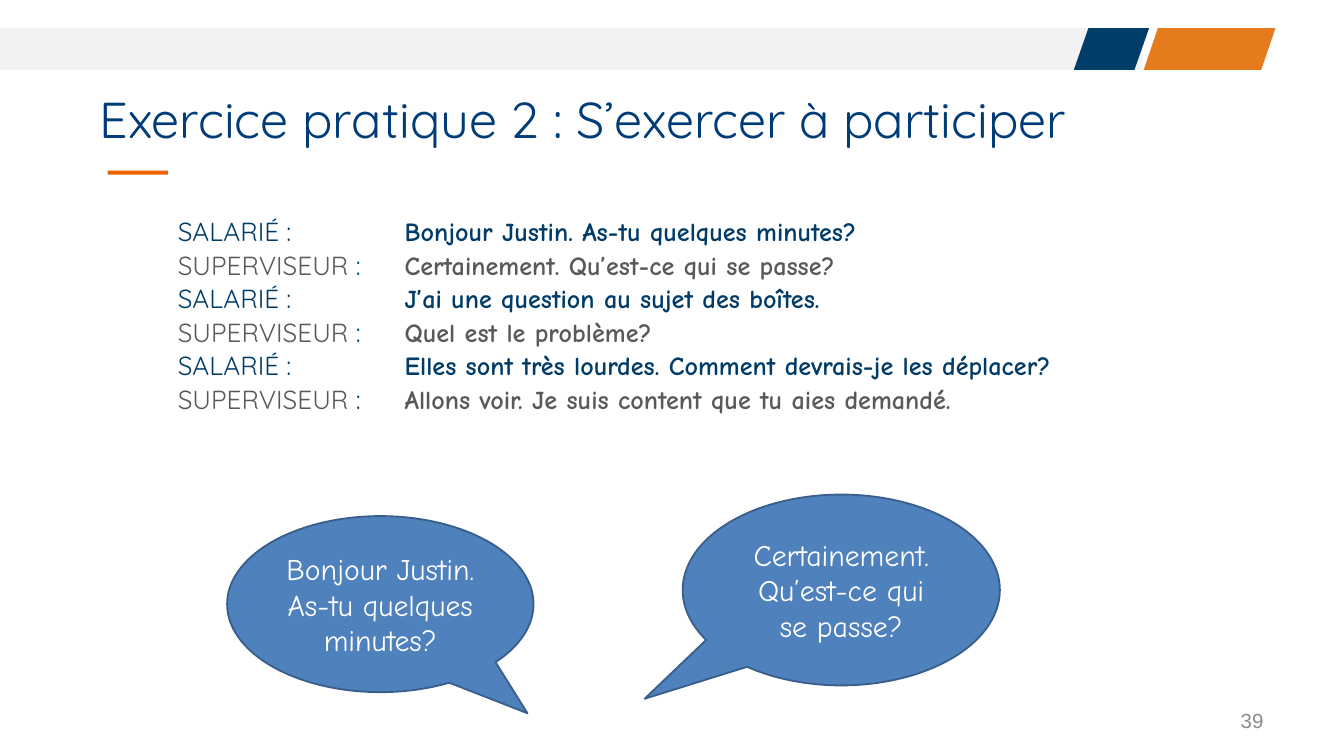
from pptx import Presentation
from pptx.dml.color import RGBColor
from pptx.enum import shapes, text
from pptx.oxml import xmlchemy
from pptx.util import Inches, Pt

NAVY, GREY = "003C67", "595959"
LINES = [
    "Bonjour Justin. As-tu quelques minutes?",
    "Certainement. Qu’est-ce qui se passe?",
    "J’ai une question au sujet des boîtes.",
    "Quel est le problème?",
    "Elles sont très lourdes. Comment devrais-je les déplacer?",
    "Allons voir. Je suis content que tu aies demandé.",
]


def rgb(value):
    """Return the colour for a hex string."""
    return RGBColor.from_string(value)


def place(sp, left, top, width, height):
    """Move and size a shape, in inches."""
    sp.left, sp.top = Inches(left), Inches(top)
    sp.width, sp.height = Inches(width), Inches(height)


def add_run(p, content, font="Quicksand", size=14, color=NAVY, bold=False):
    """Add a formatted run to a paragraph."""
    r = p.add_run()
    r.text = content
    r.font.name, r.font.size, r.font.bold = font, Pt(size), bold
    r.font.color.rgb = rgb(color)


def set_frame(sp, anchor, x=0.1, y=0.05):
    """Set wrapping, anchor and margins, and return the text frame."""
    tf = sp.text_frame
    tf.word_wrap = True
    tf.auto_size = text.MSO_AUTO_SIZE.NONE
    tf.vertical_anchor = anchor
    tf.margin_left = tf.margin_right = Inches(x)
    tf.margin_top = tf.margin_bottom = Inches(y)
    return tf


def add_shape(slide, kind, box, fill, adjust=(), line=None):
    """Add a flat preset shape."""
    sp = slide.shapes.add_shape(kind, *map(Inches, box))
    sp.shadow.inherit = False
    for i, value in enumerate(adjust):
        sp.adjustments[i] = value
    sp.fill.solid()
    sp.fill.fore_color.rgb = rgb(fill)
    if line:
        sp.line.color.rgb = rgb(line)
        sp.line.width = Pt(1)
    else:
        sp.line.fill.background()
    return sp


def add_banner(slide):
    """Add the band across the top and the rule under the title."""
    kinds = shapes.MSO_SHAPE
    add_shape(slide, kinds.ROUNDED_RECTANGLE, (0, 0.21, 8.5, 0.31), "F2F2F2", [0])
    add_shape(slide, kinds.PARALLELOGRAM, (8.51, 0.21, 0.98, 0.31), "E47C1D", [0.34])
    add_shape(slide, kinds.PARALLELOGRAM, (7.99, 0.21, 0.56, 0.31), "003E69", [0.35])
    add_shape(slide, kinds.RECTANGLE, (0.8, 1.27, 0.45, 0.03), "EB6300")


def add_title(slide, content):
    """Fill the title placeholder."""
    sp = slide.shapes.title
    place(sp, 0.67, 0.22, 8.66, 0.93)
    p = set_frame(sp, text.MSO_ANCHOR.BOTTOM, 0.07, 0.04).paragraphs[0]
    p.alignment = text.PP_ALIGN.LEFT
    p.line_spacing = 0.9
    add_run(p, content, size=27, color="003C77")


def format_line(p):
    """Set the indent, spacing and tab distance of a dialogue line."""
    p.level = 1
    p.line_spacing = 0.9
    p.space_before = Pt(2.8)
    pPr = p._p.get_or_add_pPr()
    pPr.set("marL", str(Pt(40.5)))
    pPr.set("indent", "0")
    pPr.set("defTabSz", str(Pt(40.5)))
    pPr.append(xmlchemy.OxmlElement("a:buNone"))


def add_dialogue(slide):
    """Fill the body placeholder with alternating speakers."""
    sp = slide.placeholders[1]
    place(sp, 0.69, 1.59, 8.17, 1.56)
    tf = set_frame(sp, text.MSO_ANCHOR.TOP, 0.07, 0.04)
    speakers = [("SALARIÉ", " : \t\t", NAVY), ("SUPERVISEUR", " : \t", GREY)]
    for i, words in enumerate(LINES):
        p = tf.add_paragraph() if i else tf.paragraphs[0]
        format_line(p)
        speaker, gap, color = speakers[i % 2]
        add_run(p, speaker, color=color)
        add_run(p, gap)
        add_run(p, words, font="Comic Neue", color=color, bold=True)


def add_bubble(slide, box, adjust, words):
    """Add a speech bubble."""
    kind = shapes.MSO_SHAPE.OVAL_CALLOUT
    sp = add_shape(slide, kind, box, "4F81BD", adjust, "3A5F8C")
    p = set_frame(sp, text.MSO_ANCHOR.MIDDLE).paragraphs[0]
    p.alignment = text.PP_ALIGN.CENTER
    add_run(p, words, font="Comic Neue", size=16, color="FFFFFF")


def add_number(slide, number):
    """Add the slide number."""
    sp = slide.shapes.add_textbox(*map(Inches, (7.17, 5.21, 2.33, 0.3)))
    p = set_frame(sp, text.MSO_ANCHOR.MIDDLE).paragraphs[0]
    p.alignment = text.PP_ALIGN.RIGHT
    add_run(p, number, font="Arial", size=11, color="8C8C8C")


def main():
    """Build the slide and save it."""
    prs = Presentation()
    prs.slide_width = Inches(10)
    prs.slide_height = prs.slide_width * 9 // 16
    slide = prs.slides.add_slide(prs.slide_layouts[1])
    add_banner(slide)
    add_title(slide, "Exercice pratique 2 : S’exercer à participer")
    add_dialogue(slide)
    add_number(slide, "39")
    add_bubble(slide, (1.69, 3.84, 2.28, 1.31), (0.48, 0.62), LINES[0])
    add_bubble(slide, (5.08, 3.68, 2.36, 1.42), (-0.62, 0.57), LINES[1])
    prs.save("out.pptx")


if __name__ == "__main__":
    main()
